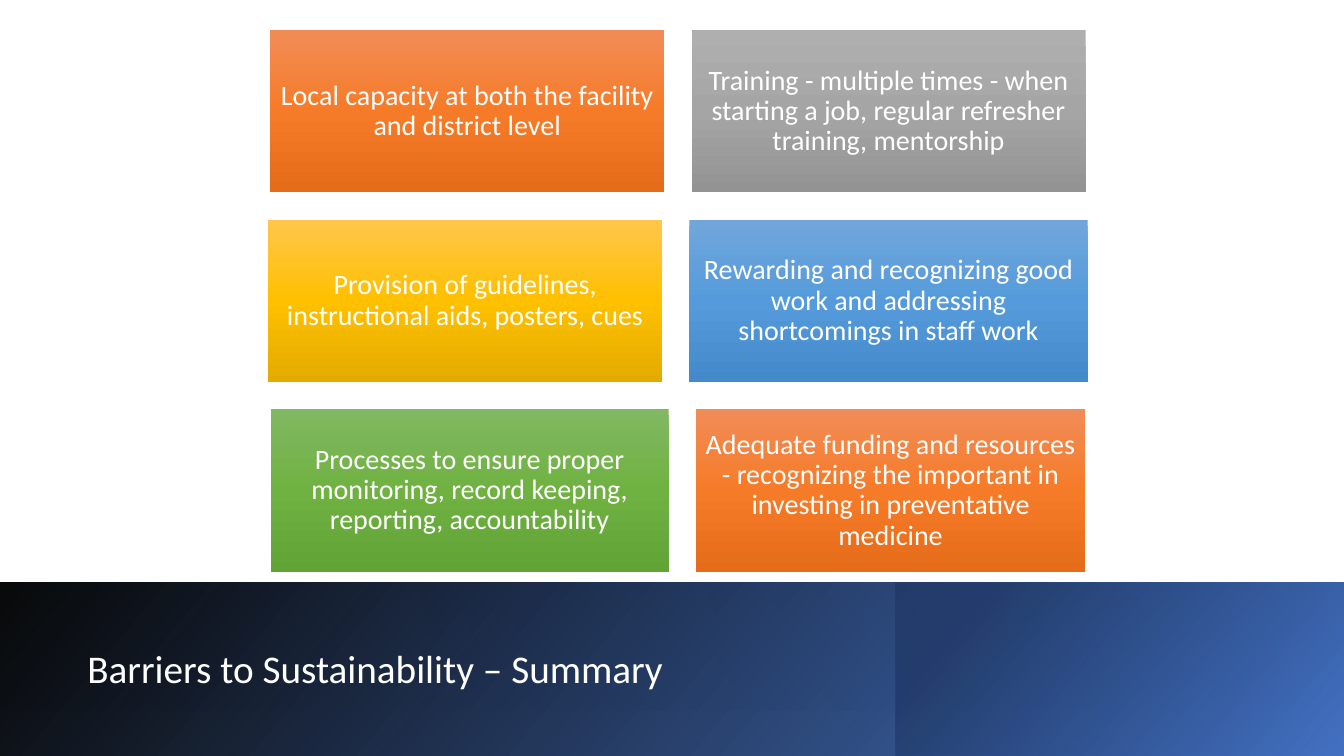
from dataclasses import dataclass

from lxml.etree import SubElement
from pptx import Presentation
from pptx.dml.color import RGBColor
from pptx.enum.shapes import MSO_SHAPE
from pptx.enum.text import MSO_ANCHOR as Anchor, PP_ALIGN as Align
from pptx.oxml.ns import qn
from pptx.util import Pt


@dataclass(frozen=True)
class Theme:
    font: str = "Calibri"
    text: str = "FFFFFF"
    title_size: int = 28
    card_size: int = 20
    line_spacing: float = 0.9
    # Gradient stops: position %, colour, opacity %
    orange: tuple = ((0, "F18C57", 100), (50, "F67B28", 100), (100, "E56C19", 100))
    gray: tuple = ((0, "AFAFAF", 100), (50, "A5A5A5", 100), (100, "939393", 100))
    gold: tuple = ((0, "FFC64B", 100), (50, "FFC000", 100), (100, "E3AB00", 100))
    blue: tuple = ((0, "71A6DB", 100), (50, "559BDB", 100), (100, "448ACA", 100))
    green: tuple = ((0, "81B861", 100), (50, "6FB242", 100), (100, "62A336", 100))
    band_glow: tuple = ((28, "2F5597", 11), (100, "000000", 77))
    band_base: tuple = ((0, "000000", 96), (100, "4472C4", 100))
    band_corner: tuple = ((19, "203864", 68), (100, "4472C4", 79))


THEME = Theme()
SLIDE_WIDTH, SLIDE_HEIGHT = 960, 540
BAND_TOP = 416.16

# Each row: card widths, then the cards as (text, gradient)
CARD_ROWS = [
    ((281.5, 281.5), (
        ("Local capacity at both the facility and district level", THEME.orange),
        ("Training - multiple times - when starting a job, regular refresher "
         "training, mentorship", THEME.gray))),
    ((281.5, 284.4), (
        ("Provision of guidelines, instructional aids, posters, cues", THEME.gold),
        ("Rewarding and recognizing good work and addressing shortcomings in "
         "staff work", THEME.blue))),
    ((284.4, 278), (
        ("Processes to ensure proper monitoring, record keeping, reporting, "
         "accountability", THEME.green),
        ("Adequate funding and resources - recognizing the important in "
         "investing in preventative medicine", THEME.orange))),
]


def set_gradient(shape, stops, angle):
    shape.fill.background()
    properties = shape.element.spPr
    gradient = properties.makeelement(qn("a:gradFill"), {"rotWithShape": "1"})
    stop_list = SubElement(gradient, qn("a:gsLst"))
    for position, color, opacity in stops:
        stop = SubElement(stop_list, qn("a:gs"), pos=str(position * 1000))
        color_node = SubElement(stop, qn("a:srgbClr"), val=color)
        if opacity < 100:
            SubElement(color_node, qn("a:alpha"), val=str(opacity * 1000))
    SubElement(gradient, qn("a:lin"), ang=str(angle * 60000), scaled="0")
    properties.replace(properties.find(qn("a:noFill")), gradient)


def add_gradient_box(slide, box, stops, angle):
    shape = slide.shapes.add_shape(MSO_SHAPE.RECTANGLE, *map(Pt, box))
    shape.shadow.inherit = False
    set_gradient(shape, stops, angle)
    shape.line.fill.background()
    return shape


def write_text(shape, text, size, paragraph_format, frame_format):
    frame = shape.text_frame
    frame_values = {"word_wrap": True, "vertical_anchor": Anchor.MIDDLE, **frame_format}
    for name, value in frame_values.items():
        setattr(frame, name, value)
    paragraph = frame.paragraphs[0]
    paragraph_values = {"line_spacing": THEME.line_spacing, **paragraph_format}
    for name, value in paragraph_values.items():
        setattr(paragraph, name, value)
    run = paragraph.add_run()
    run.text = text
    for name, value in {"name": THEME.font, "size": Pt(size)}.items():
        setattr(run.font, name, value)
    run.font.color.rgb = RGBColor.from_string(THEME.text)


def add_title_band(slide, box, title):
    left, top, width, height = box
    corner_width = width / 3
    layers = [
        ((left, top, width, 91.5), THEME.band_glow, 210, 0),
        (box, THEME.band_base, 140, 0),
        ((left + width - corner_width, top, corner_width, height),
         THEME.band_corner, 320, 180),
    ]
    for layer_box, stops, angle, rotation in layers:
        layer = add_gradient_box(slide, layer_box, stops, angle)
        layer.rotation = rotation
        layer.element.spPr.get_or_add_xfrm().set("flipH", "1")

    title_box = (left + 55.4, top + 27.4, 558.7, 70.6)
    text_box = slide.shapes.add_textbox(*map(Pt, title_box))
    write_text(text_box, title, THEME.title_size, {"alignment": Align.LEFT}, {})


def add_card_grid(slide, box, rows, gap=19.5):
    """Stack the rows at equal gaps, each centred across the box."""
    left, top, width, height = box
    card_height = (height - gap * (len(rows) - 1)) / len(rows)
    margins = ("margin_left", "margin_top", "margin_right", "margin_bottom")
    for index, (widths, cards) in enumerate(rows):
        card_left = left + (width - sum(widths) - gap * (len(widths) - 1)) / 2
        card_top = top + index * (card_height + gap)
        for card_width, (text, stops) in zip(widths, cards):
            card_box = (card_left, card_top, card_width, card_height)
            card = add_gradient_box(slide, card_box, stops, 90)
            write_text(card, text, THEME.card_size,
                       {"alignment": Align.CENTER, "space_after": Pt(7)},
                       dict.fromkeys(margins, Pt(6)))
            card_left += card_width + gap


def main():
    presentation = Presentation()
    presentation.slide_width = Pt(SLIDE_WIDTH)
    presentation.slide_height = Pt(SLIDE_HEIGHT)
    slide = presentation.slides.add_slide(presentation.slide_layouts[6])
    add_title_band(slide, (0, BAND_TOP, SLIDE_WIDTH, SLIDE_HEIGHT - BAND_TOP),
                   "Barriers to Sustainability – Summary")
    add_card_grid(slide, (191.5, 21.5, 585.4, 387), CARD_ROWS)
    presentation.save("out.pptx")


if __name__ == "__main__":
    main()
